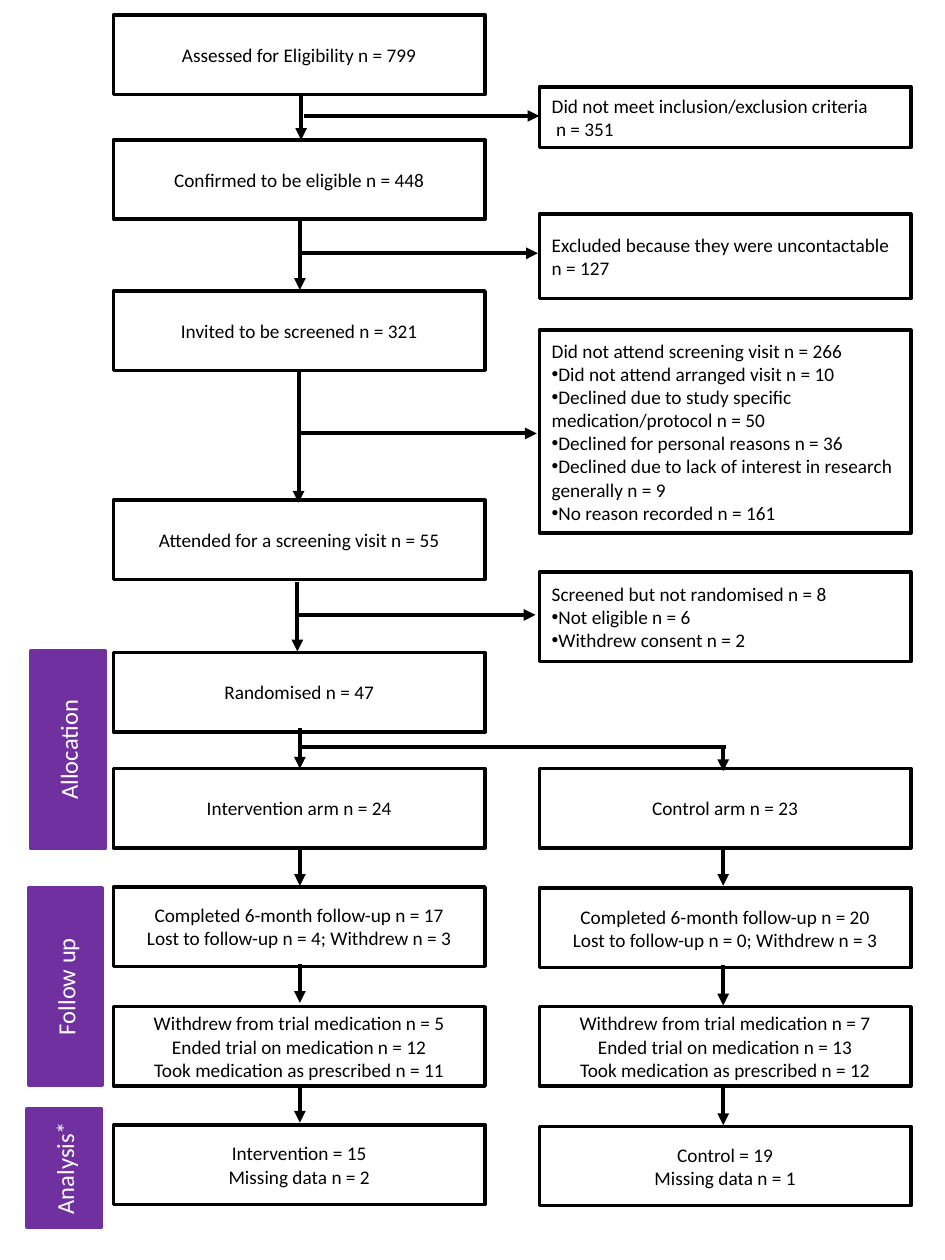
from dataclasses import dataclass

import pptx
import pptx.dml.color
import pptx.enum.shapes
import pptx.enum.text
import pptx.oxml
import pptx.oxml.ns
import pptx.util
from pptx.util import Inches

RGBColor = pptx.dml.color.RGBColor
BLACK = RGBColor(0x00, 0x00, 0x00)
WHITE = RGBColor(0xFF, 0xFF, 0xFF)
PURPLE = RGBColor(0x70, 0x30, 0xA0)
ALIGN = pptx.enum.text.PP_ALIGN

LEFT_COLUMN, RIGHT_COLUMN = 0.9, 4.28
BOX_WIDTH, STEP_HEIGHT = 2.95, 0.63
LEFT_AXIS, RIGHT_AXIS = 2.38, 5.74
STAGE_THICKNESS = 0.59
BULLET = "•"


@dataclass
class Box:
    left: float
    top: float
    lines: list[str]
    height: float = STEP_HEIGHT
    align: ALIGN = ALIGN.CENTER


@dataclass
class Stage:
    name: str
    centre_x: float
    centre_y: float
    length: float


@dataclass
class Line:
    start: tuple[float, float]
    end: tuple[float, float]
    arrow: bool = True


def step(top: float, *lines: str) -> Box:
    return Box(LEFT_COLUMN, top, list(lines))


def control(top: float, *lines: str) -> Box:
    return Box(RIGHT_COLUMN, top, list(lines))


def exclusion(top: float, height: float, *lines: str) -> Box:
    return Box(RIGHT_COLUMN, top, list(lines), height, ALIGN.LEFT)


def down(x: float, top: float, bottom: float) -> Line:
    return Line((x, top), (x, bottom))


def across(y: float, left: float, right: float, arrow: bool = True) -> Line:
    return Line((left, y), (right, y), arrow)


BOXES = [
    step(0.12, "Assessed for Eligibility n = 799"),
    step(1.11, "Confirmed to be eligible n = 448"),
    step(2.31, "Invited to be screened n = 321"),
    step(3.97, "Attended for a screening visit n = 55"),
    step(5.18, "Randomised n = 47"),
    step(6.1, "Intervention arm n = 24"),
    step(7.04, "Completed 6-month follow-up n = 17",
         "Lost to follow-up n = 4; Withdrew n = 3"),
    step(7.99, "Withdrew from trial medication n = 5",
         "Ended trial on medication n = 12",
         "Took medication as prescribed n = 11"),
    step(8.93, "Intervention = 15", "Missing data n = 2"),
    control(6.1, "Control arm n = 23"),
    control(7.05, "Completed 6-month follow-up n = 20",
            "Lost to follow-up n = 0; Withdrew n = 3"),
    control(7.99, "Withdrew from trial medication n = 7",
            "Ended trial on medication n = 13",
            "Took medication as prescribed n = 12"),
    control(8.94, "Control = 19", "Missing data n = 1"),
    exclusion(0.69, 0.48, "Did not meet inclusion/exclusion criteria",
              " n = 351"),
    exclusion(1.7, 0.67, "Excluded because they were uncontactable n = 127"),
    exclusion(2.62, 1.61, "Did not attend screening visit n = 266",
              "•Did not attend arranged visit n = 10",
              "•Declined due to study specific medication/protocol n = 50",
              "•Declined for personal reasons n = 36",
              "•Declined due to lack of interest in research generally n = 9",
              "•No reason recorded n = 161"),
    exclusion(4.54, 0.71, "Screened but not randomised n = 8",
              "•Not eligible n = 6", "•Withdrew consent n = 2"),
]

STAGES = [
    Stage("Allocation", 0.54, 5.95, 1.57),
    Stage("Follow up", 0.52, 7.83, 1.57),
    Stage("Analysis*", 0.51, 9.27, 0.94),
]

LINES = [
    down(2.39, 0.75, 1.11), across(0.92, 2.41, 4.28),
    down(2.38, 1.75, 2.3), across(2.01, 2.39, 4.27),
    down(2.37, 2.93, 3.99), across(3.44, 2.38, 4.26),
    down(2.36, 4.62, 5.17), across(4.88, 2.37, 4.25),
    down(LEFT_AXIS, 5.78, 6.1),
    across(5.93, 2.37, 5.76, arrow=False),
    down(RIGHT_AXIS, 5.92, 6.12),
    down(LEFT_AXIS, 6.72, 7.03), down(RIGHT_AXIS, 6.72, 7.03),
    down(LEFT_AXIS, 7.65, 7.96), down(RIGHT_AXIS, 7.66, 7.98),
    down(LEFT_AXIS, 8.6, 8.91), down(RIGHT_AXIS, 8.61, 8.93),
]


def add_child(parent, tag: str, **attributes: str) -> None:
    child = pptx.oxml.ns.qn(tag)
    element = parent.makeelement(child, attributes)
    parent.append(element)


def draw_rectangle(page, left: float, top: float, width: float, height: float,
                   fill: RGBColor, outline: RGBColor):
    shape = page.shapes.add_shape(
        pptx.enum.shapes.MSO_SHAPE.RECTANGLE,
        Inches(left), Inches(top), Inches(width), Inches(height))
    shape.shadow.inherit = False
    shape.fill.solid()
    shape.fill.fore_color.rgb = fill
    shape.line.color.rgb = outline
    shape.line.width = pptx.util.Pt(2)
    return shape


def write_lines(shape, lines: list[str], align: ALIGN, size: int,
                color: RGBColor) -> None:
    """Put one paragraph per line; a leading bullet becomes a real one."""
    frame = shape.text_frame
    frame.word_wrap = True
    frame.vertical_anchor = pptx.enum.text.MSO_ANCHOR.MIDDLE
    font_format = {"name": "Calibri", "size": pptx.util.Pt(size)}
    for index, line in enumerate(lines):
        para = frame.add_paragraph() if index else frame.paragraphs[0]
        para.alignment = align
        if line.startswith(BULLET):
            properties = para._p.get_or_add_pPr()
            add_child(properties, "a:buFont", typeface="Arial")
            add_child(properties, "a:buChar", char=BULLET)
        span = para.add_run()
        span.text = line.removeprefix(BULLET)
        for name, value in font_format.items():
            setattr(span.font, name, value)
        span.font.color.rgb = color


def draw_box(page, box: Box) -> None:
    shape = draw_rectangle(page, box.left, box.top, BOX_WIDTH, box.height,
                           WHITE, BLACK)
    write_lines(shape, box.lines, box.align, 11, BLACK)


def draw_stage(page, stage: Stage) -> None:
    """Draw a stage label turned to read upwards."""
    shape = draw_rectangle(page, stage.centre_x - stage.length / 2,
                           stage.centre_y - STAGE_THICKNESS / 2,
                           stage.length, STAGE_THICKNESS, PURPLE, PURPLE)
    shape.rotation = 270
    write_lines(shape, [stage.name], ALIGN.CENTER, 14, WHITE)


def draw_line(page, line: Line) -> None:
    connector = page.shapes.add_connector(
        pptx.enum.shapes.MSO_CONNECTOR.STRAIGHT,
        *(Inches(value) for value in line.start + line.end))
    connector.line.color.rgb = BLACK
    connector.line.width = pptx.util.Pt(2.25)
    if line.arrow:
        add_child(connector.line._get_or_add_ln(), "a:tailEnd", type="triangle")
    add_child(connector._element.spPr, "a:effectLst")


def main() -> None:
    deck = pptx.Presentation()
    deck.slide_width, deck.slide_height = Inches(7.5), Inches(10)
    page = deck.slides.add_slide(deck.slide_layouts[6])
    for box in BOXES:
        draw_box(page, box)
    for stage in STAGES:
        draw_stage(page, stage)
    for line in LINES:
        draw_line(page, line)
    deck.save("out.pptx")


if __name__ == "__main__":
    main()
